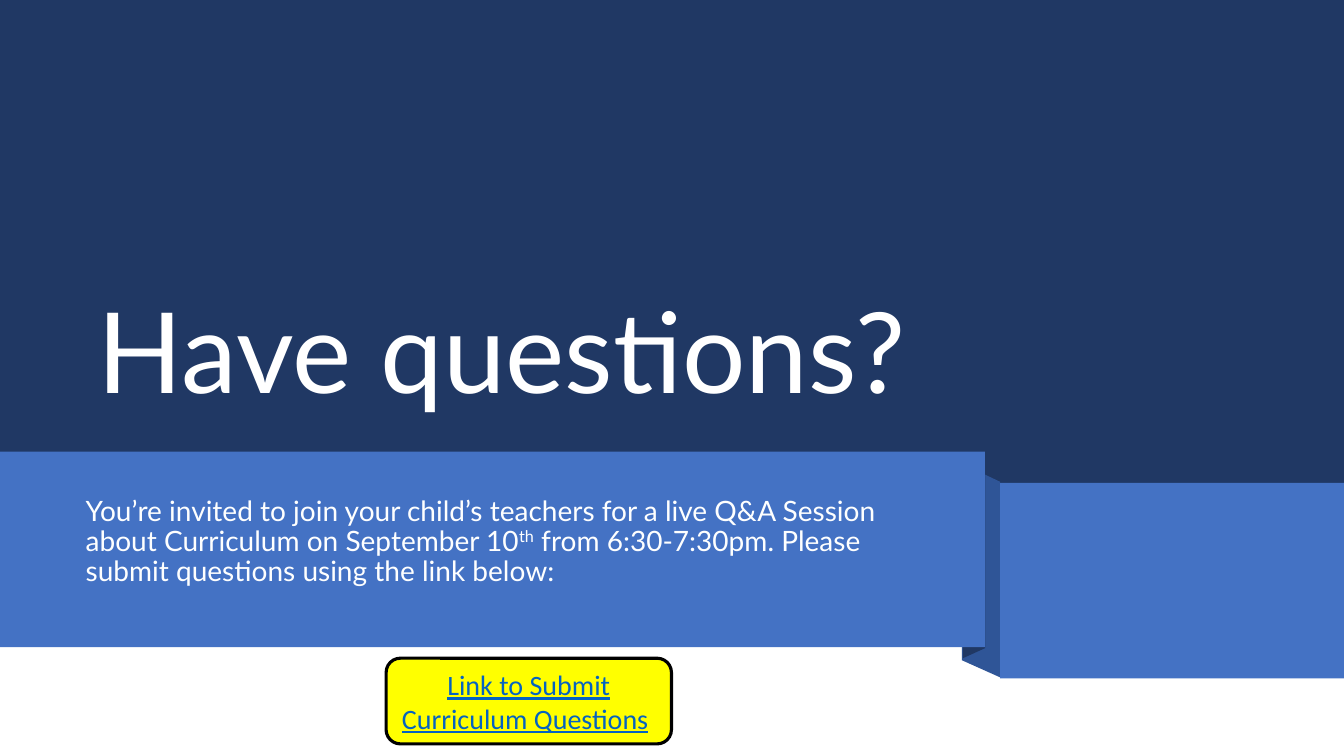
from pptx import Presentation
from pptx.dml.color import RGBColor
from pptx.enum import shapes, text
from pptx.util import Inches, Pt

NAVY, BLUE, FOLD_BLUE = "203864", "4472C4", "2F5597"
WHITE, YELLOW, LINK_BLUE = "FFFFFF", "FFFF00", "0563C1"
RECT = shapes.MSO_SHAPE.RECTANGLE
RIBBON_TOP, RIBBON_HEIGHT, RIBBON_RIGHT = 4.48, 1.94, 9.77
TAIL_LEFT, TAIL_TOP = 9.92, 4.79

prs = Presentation()
prs.slide_width, prs.slide_height = Inches(13.33), Inches(7.5)
slide = prs.slides.add_slide(prs.slide_layouts[0])
tree = slide.shapes


def paint(shape, color, box=None):
    """Fill a shape without outline or shadow, placing it if a box is given."""
    if box:
        shape.left, shape.top, shape.width, shape.height = map(Inches, box)
    shape.fill.solid()
    shape.fill.fore_color.rgb = RGBColor.from_string(color)
    shape.line.fill.background()
    shape.shadow.inherit = False
    return shape


def write(paragraph, words, size=20, font="Lato", color=WHITE, underline=False, raised=False):
    run = paragraph.add_run()
    run.text = words
    run.font.size, run.font.name = Pt(size), font
    run.font.color.rgb = RGBColor.from_string(color)
    run.font.underline = underline
    if raised:
        run._r.get_or_add_rPr().set("baseline", "30000")


# Navy panel with the title on top of it
paint(tree.add_shape(RECT, 0, 0, prs.slide_width, Inches(4.98)), NAVY)

title, invitation = tree.title, slide.placeholders[1]
for holder, box, anchor in (
    (title, (0.87, 0.7, 9.05, 3.49), text.MSO_ANCHOR.BOTTOM),
    (invitation, (0.75, 4.88, 8.72, 1.14), text.MSO_ANCHOR.TOP),
):
    holder.left, holder.top, holder.width, holder.height = map(Inches, box)
    frame = holder.text_frame
    frame.word_wrap, frame.auto_size = True, text.MSO_AUTO_SIZE.NONE
    frame.vertical_anchor = anchor
    frame.paragraphs[0].alignment = text.PP_ALIGN.LEFT
    frame.paragraphs[0].line_spacing = 0.9
tree._spTree.append(title._element)
write(title.text_frame.paragraphs[0], "Have questions?", size=80)

# Folded ribbon: two fold sides, then the front and the tail
for color, corners in (
    (FOLD_BLUE, ((9.92, 6.72), (9.54, 6.55), (9.54, 4.6), (9.92, 4.78))),
    (NAVY, ((9.77, 6.43), (9.55, 6.53), (9.55, 4.58), (9.77, 4.48))),
):
    points = [(Inches(x), Inches(y)) for x, y in corners]
    fold = tree.build_freeform(*points[0])
    fold.add_line_segments(points[1:], close=True)
    paint(fold.convert_to_shape(), color)

for box in (
    (0, RIBBON_TOP, RIBBON_RIGHT, RIBBON_HEIGHT),
    (TAIL_LEFT, TAIL_TOP, 13.33 - TAIL_LEFT, RIBBON_HEIGHT),
):
    paint(tree.add_shape(RECT, 0, 0, 0, 0), BLUE, box)

tree._spTree.append(invitation._element)
message = invitation.text_frame.paragraphs[0]
message.space_before = Pt(10)
write(message, "You’re invited to join your child’s teachers for a live Q&A Session "
               "about Curriculum on September 10", color="FEFFFF")
write(message, "th", color="FEFFFF", raised=True)
write(message, " from 6:30-7:30pm. Please submit questions using the link below:", color="FEFFFF")

# Button
button = paint(tree.add_shape(shapes.MSO_SHAPE.ROUNDED_RECTANGLE, 0, 0, 0, 0),
               YELLOW, (3.83, 6.53, 2.83, 0.85))
button.line.color.rgb = RGBColor.from_string("000000")
button.line.width = Pt(2.25)
button.text_frame.word_wrap = True
button.text_frame.vertical_anchor = text.MSO_ANCHOR.MIDDLE
label = button.text_frame.paragraphs[0]
label.alignment, label.space_after = text.PP_ALIGN.CENTER, Pt(6)
write(label, "Link to Submit Curriculum Questions", font="Calibri", color=LINK_BLUE, underline=True)
write(label, " ", color=YELLOW)

prs.save("out.pptx")
